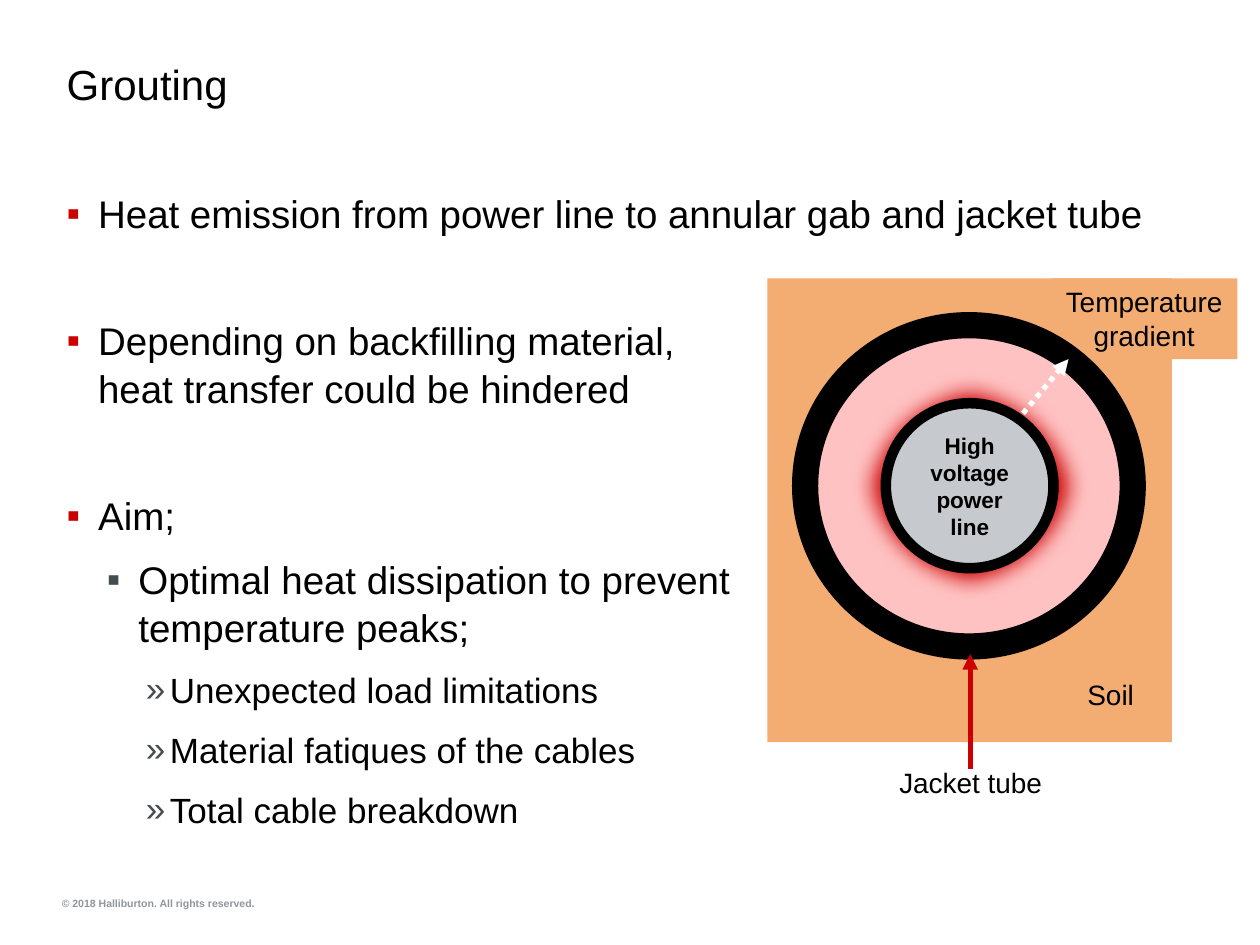
from dataclasses import dataclass
from typing import Any

from lxml import etree
from pptx import Presentation
from pptx.dml.color import RGBColor
from pptx.enum.dml import MSO_LINE
from pptx.enum.shapes import MSO_CONNECTOR, MSO_SHAPE
from pptx.enum.text import MSO_ANCHOR, PP_ALIGN
from pptx.oxml.ns import qn
from pptx.util import Pt

RECT, OVAL = MSO_SHAPE.RECTANGLE, MSO_SHAPE.OVAL
LEFT, CENTER = PP_ALIGN.LEFT, PP_ALIGN.CENTER
TOP, MIDDLE = MSO_ANCHOR.TOP, MSO_ANCHOR.MIDDLE
STRAIGHT, DOTTED = MSO_CONNECTOR.STRAIGHT, MSO_LINE.ROUND_DOT

COLORS = {
    "black": "000000", "white": "FFFFFF", "red": "CC0000", "soil": "F3AC71",
    "grout": "FFC2C2", "cable": "C6CACE", "slate": "454C50", "footer": "8E979D",
}


@dataclass
class Sketch:
    """Draws styled elements on the current slide, with lengths in points."""

    slide: Any
    font: str = "Arial"

    def color(self, name):
        return RGBColor.from_string(COLORS[name])

    def style(self, paragraph, size, color="black", bold=False):
        font = paragraph.font
        font.name, font.size, font.bold = self.font, Pt(size), bold
        font.color.rgb = self.color(color)

    def caption(self, shape, text, size, color="black", bold=False, align=CENTER,
                anchor=TOP, insets=(7.2, 3.6, 7.2, 3.6), wrap=True):
        frame = shape.text_frame
        frame.word_wrap, frame.vertical_anchor = wrap, anchor
        (frame.margin_left, frame.margin_top,
         frame.margin_right, frame.margin_bottom) = map(Pt, insets)
        paragraph = frame.paragraphs[0]
        paragraph.text, paragraph.alignment = text, align
        self.style(paragraph, size, color, bold)

    def label(self, box, text, size, **options):
        self.caption(self.slide.shapes.add_textbox(*map(Pt, box)), text, size, **options)

    def shape(self, kind, box, fill=None, line=None, width=0, soft_edge=0):
        shape = self.slide.shapes.add_shape(kind, *map(Pt, box))
        shape.shadow.inherit = False
        if fill:
            shape.fill.solid()
            shape.fill.fore_color.rgb = self.color(fill)
        else:
            shape.fill.background()
        if line:
            shape.line.color.rgb = self.color(line)
            shape.line.width = Pt(width)
        else:
            shape.line.fill.background()
        if soft_edge:
            effects = shape._element.spPr.find(qn("a:effectLst"))
            etree.SubElement(effects, qn("a:softEdge"), rad=str(Pt(soft_edge)))
        return shape

    def arrow(self, start, end, color, dash=None):
        arrow = self.slide.shapes.add_connector(STRAIGHT, *map(Pt, start + end))
        arrow.line.color.rgb = self.color(color)
        arrow.line.width = Pt(3)
        if dash:
            arrow.line.dash_style = dash
        outline = arrow._element.spPr.find(qn("a:ln"))
        etree.SubElement(outline, qn("a:tailEnd"), type="triangle")
        etree.SubElement(arrow._element.spPr, qn("a:effectLst"))

    def bullets(self, box, items, levels):
        frame = self.slide.shapes.add_textbox(*map(Pt, box)).text_frame
        frame.word_wrap = True
        for index, (level, before, text) in enumerate(items):
            paragraph = frame.add_paragraph() if index else frame.paragraphs[0]
            mark, mark_color, margin, hang, size = levels[level]
            paragraph.text, paragraph.level = text, level
            paragraph.line_spacing = 1.05
            paragraph.space_before, paragraph.space_after = Pt(before), Pt(6)
            props = paragraph._p.get_or_add_pPr()
            props.set("marL", str(Pt(margin)))
            props.set("indent", str(Pt(-hang)))
            tint = etree.SubElement(props, qn("a:buClr"))
            etree.SubElement(tint, qn("a:srgbClr"), val=COLORS[mark_color])
            etree.SubElement(props, qn("a:buFont"), typeface=self.font)
            etree.SubElement(props, qn("a:buChar"), char=mark)
            self.style(paragraph, size)


def main():
    deck = Presentation()
    deck.slide_width, deck.slide_height = Pt(720), Pt(540)
    sketch = Sketch(deck.slides.add_slide(deck.slide_layouts[6]))

    sketch.label((35.3, 512.6, 111.6, 7.2), "© 2018 Halliburton. All rights reserved.", 6,
                 color="footer", bold=True, align=LEFT, insets=(0, 0, 0, 0), wrap=False)

    sketch.shape(RECT, (438.5, 159.1, 231.1, 265), "soil")
    gradient = sketch.shape(RECT, (600.5, 159.1, 106.6, 46.1), "soil")
    sketch.caption(gradient, "Temperature gradient", 16)
    sketch.shape(OVAL, (456.5, 181.4, 195.8, 192.2), "grout")
    sketch.shape(OVAL, (460.1, 185.8, 187.2, 183.6), line="black", width=15)
    sketch.shape(OVAL, (484.6, 211, 139.7, 133.9), "red", soft_edge=12.5)
    power_line = sketch.shape(OVAL, (506.2, 230.4, 95.8, 94.3), "cable", "black", 6)
    sketch.caption(power_line, "High voltage power line", 12.9, bold=True,
                   anchor=MIDDLE, insets=(7.2,) * 4)

    sketch.arrow((554.4, 439.2), (554.4, 373.7), "red")
    sketch.arrow((584.6, 236.2), (610.6, 205.2), "white", DOTTED)
    sketch.label((487.4, 434.2, 134.6, 26.6), "Jacket tube", 16)
    sketch.label((567.4, 383.8, 134.6, 26.6), "Soil", 16)

    sketch.label((31, 33.5, 658.8, 64.5), "Grouting", 24, align=LEFT,
                 insets=(7.2, 0, 7.2, 3.6))
    levels = [("▪", "red", 18, 18, 22), ("▪", "slate", 41, 18, 22),
              ("»", "slate", 59, 13.7, 20)]
    tight, wide = 3, 38.5
    sketch.bullets((31, 104, 658.8, 383.4), [
        (0, 0, "Heat emission from power line to annular gab and jacket tube"),
        (0, wide, "Depending on backfilling material,\vheat transfer could be hindered"),
        (0, wide, "Aim;"),
        (1, tight, "Optimal heat dissipation to prevent\vtemperature peaks;"),
        (2, tight, "Unexpected load limitations"),
        (2, tight, "Material fatiques of the cables"),
        (2, tight, "Total cable breakdown"),
    ], levels)

    deck.save("out.pptx")


if __name__ == "__main__":
    main()
